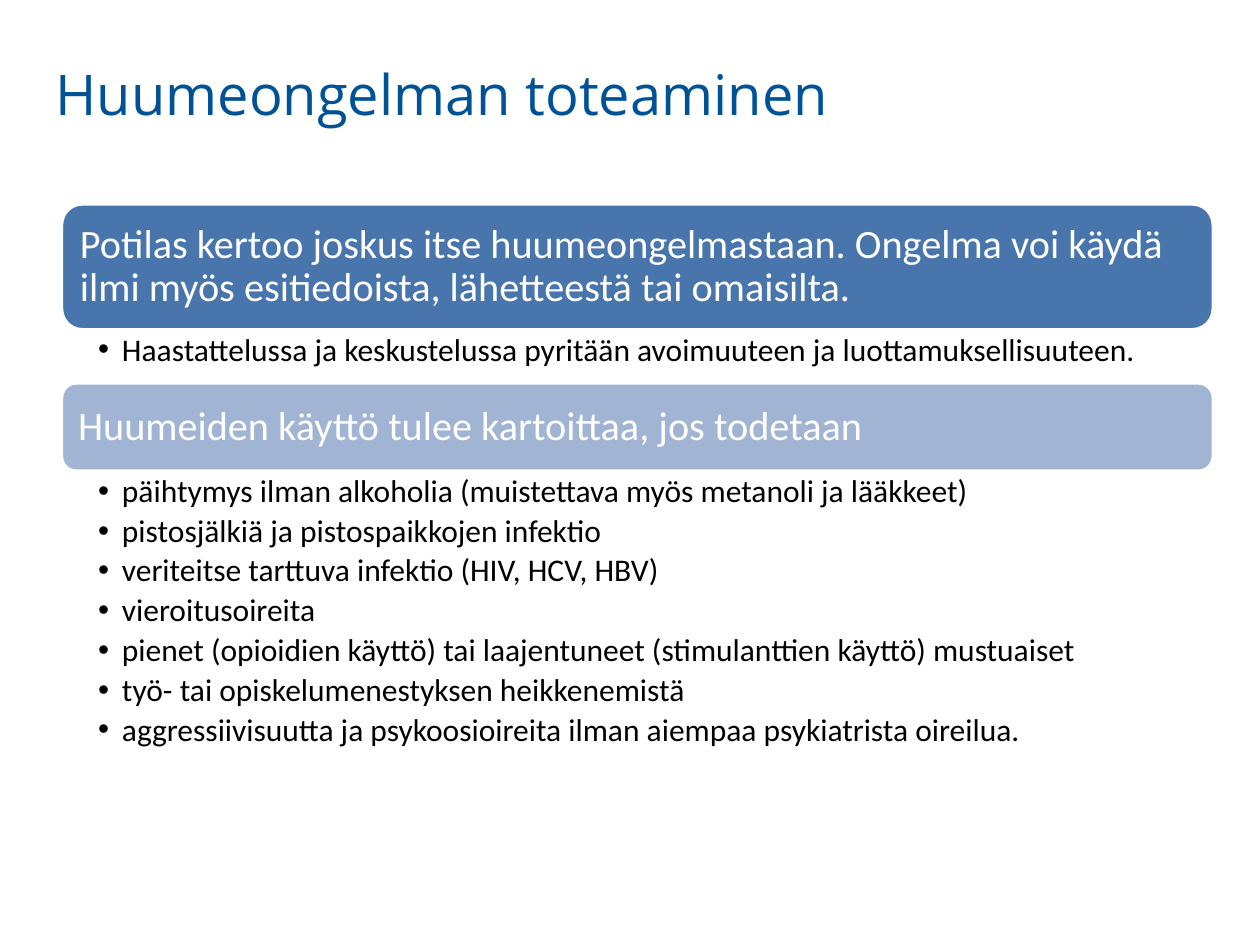
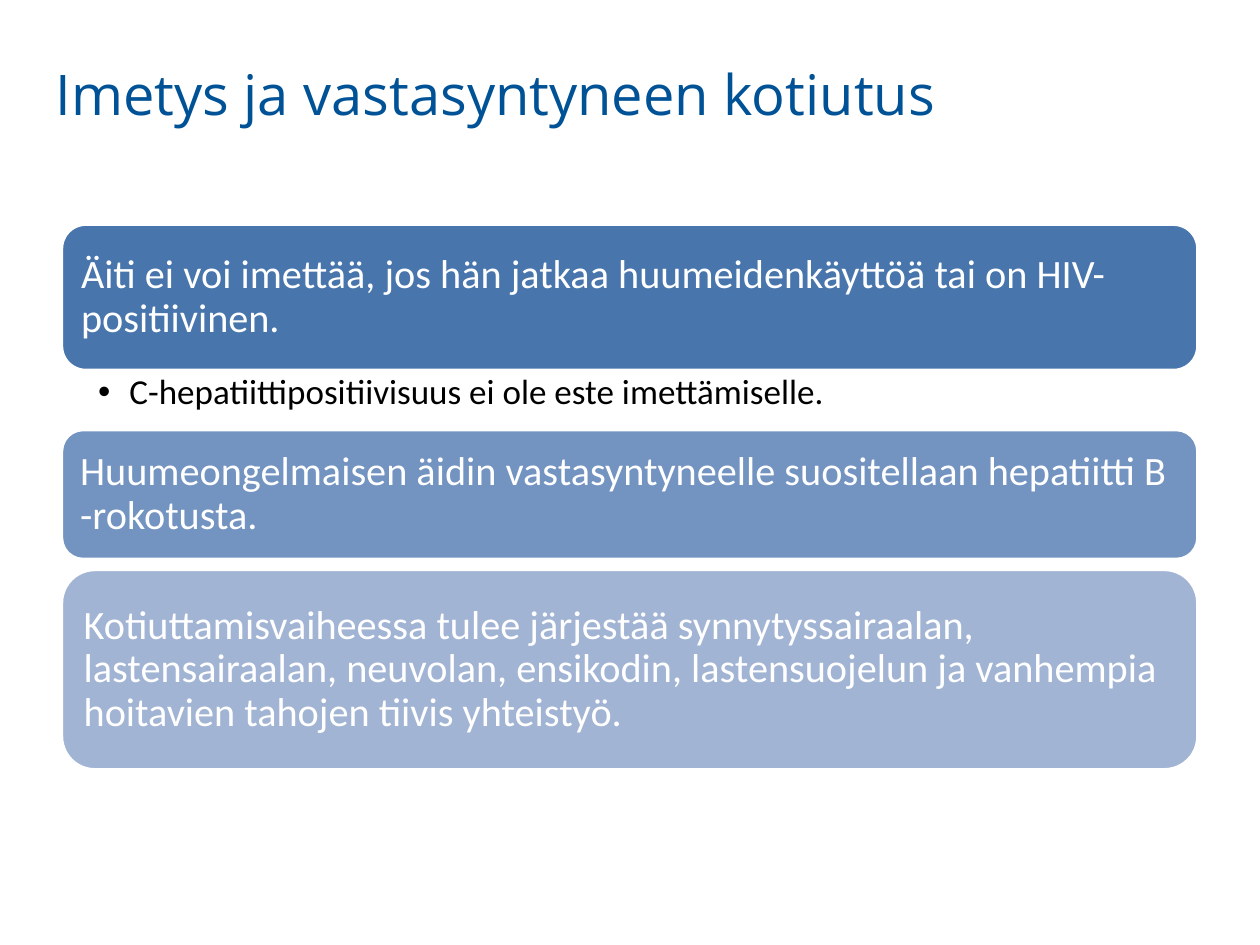
from lxml import etree
from pptx import Presentation
from pptx.dml.color import RGBColor
from pptx.enum import shapes, text
from pptx.oxml import ns
from pptx.util import Cm, Pt

TITLE_BLUE = RGBColor(0x00, 0x52, 0x96)
DEEP_BLUE = RGBColor(0x48, 0x75, 0xAC)
MID_BLUE = RGBColor(0x73, 0x93, 0xC1)
PALE_BLUE = RGBColor(0xA2, 0xB4, 0xD4)
WHITE = RGBColor(0xFF, 0xFF, 0xFF)
BLACK = RGBColor(0x00, 0x00, 0x00)


class Deck:
    """Shared style, the current slide and the next free height on it."""

    TITLE_FONT, BODY_FONT = "Open Sans", "Calibri"
    LEFT = Cm(1.24)

    def __init__(self):
        self.prs = Presentation()
        self.prs.slide_width, self.prs.slide_height = Cm(25.4), Cm(19.05)

    def start_slide(self, heading, top, width):
        self.slide = self.prs.slides.add_slide(self.prs.slide_layouts[6])
        self.top, self.width = top, width
        title = self.slide.shapes.add_textbox(Cm(0.94), Cm(1.12), Cm(22.91), Cm(3.2))
        frame = self.set_frame(title, Cm(0.18), Cm(0.18), Cm(0.08))
        frame.text = heading
        self.set_font(frame.paragraphs[0], self.TITLE_FONT, 32, TITLE_BLUE)

    def set_frame(self, shape, left, right, vertical):
        frame = shape.text_frame
        frame.word_wrap = True
        frame.margin_left, frame.margin_right = left, right
        frame.margin_top = frame.margin_bottom = vertical
        return frame

    def set_font(self, paragraph, name, size, colour):
        for run in paragraph.runs:
            run.font.name, run.font.size = name, Pt(size)
            run.font.color.rgb = colour

    def band(self, statement, height, fill, gap=0):
        """Rounded band with a statement, placed under what came before."""
        self.top += gap
        band = self.slide.shapes.add_shape(
            shapes.MSO_SHAPE.ROUNDED_RECTANGLE, self.LEFT, self.top, self.width, height)
        band.shadow.inherit = False
        band.fill.solid()
        band.fill.fore_color.rgb = fill
        band.line.color.rgb = WHITE
        band.line.width = Pt(2)
        frame = self.set_frame(band, Cm(0.25), Cm(0.25), Cm(0.25))
        frame.vertical_anchor = text.MSO_ANCHOR.MIDDLE
        frame.text = statement
        paragraph = frame.paragraphs[0]
        paragraph.alignment = text.PP_ALIGN.LEFT
        paragraph.line_spacing = 0.9
        self.set_font(paragraph, self.BODY_FONT, 23, WHITE)
        self.top += height

    def bullets(self, points, height, size=18, indent=Cm(0.48)):
        """Bulleted details directly under a band."""
        details = self.slide.shapes.add_textbox(self.LEFT, self.top, self.width, height)
        frame = self.set_frame(details, Cm(0.74), Cm(0.38), Cm(0.08))
        frame.text = "\n".join(points)
        for paragraph in frame.paragraphs:
            props = paragraph._p.get_or_add_pPr()
            props.set("marL", str(indent))
            props.set("indent", str(-indent))
            etree.SubElement(props, ns.qn("a:buFont")).set("typeface", "Arial")
            etree.SubElement(props, ns.qn("a:buChar")).set("char", "•")
            paragraph.line_spacing = 0.9
            paragraph.space_after = Pt(3.3)
            self.set_font(paragraph, self.BODY_FONT, size, BLACK)
        self.top += height


def main():
    deck = Deck()

    # Recognising a drug problem
    deck.start_slide("Huumeongelman toteaminen", Cm(4.11), Cm(23.22))
    deck.band("Potilas kertoo joskus itse huumeongelmastaan. Ongelma voi käydä ilmi "
              "myös esitiedoista, lähetteestä tai omaisilta.", Cm(2.54), DEEP_BLUE)
    deck.bullets(["Haastattelussa ja keskustelussa pyritään avoimuuteen ja "
                  "luottamuksellisuuteen."], Cm(1.07))
    deck.band("Huumeiden käyttö tulee kartoittaa, jos todetaan", Cm(1.78), PALE_BLUE)
    deck.bullets([
        "päihtymys ilman alkoholia (muistettava myös metanoli ja lääkkeet)",
        "pistosjälkiä ja pistospaikkojen infektio",
        "veriteitse tarttuva infektio (HIV, HCV, HBV)",
        "vieroitusoireita",
        "pienet (opioidien käyttö) tai laajentuneet (stimulanttien käyttö) mustuaiset",
        "työ- tai opiskelumenestyksen heikkenemistä",
        "aggressiivisuutta ja psykoosioireita ilman aiempaa psykiatrista oireilua.",
    ], Cm(5.94))

    # Breastfeeding and discharge of the newborn
    deck.start_slide("Imetys ja vastasyntyneen kotiutus", Cm(4.52), Cm(22.91))
    deck.band("Äiti ei voi imettää, jos hän jatkaa huumeidenkäyttöä tai on "
              "HIV-positiivinen.", Cm(2.95), DEEP_BLUE)
    deck.bullets(["C-hepatiittipositiivisuus ei ole este imettämiselle."],
                 Cm(1.19), size=20, indent=Cm(0.63))
    deck.band("Huumeongelmaisen äidin vastasyntyneelle suositellaan hepatiitti B "
              "-rokotusta.", Cm(2.62), MID_BLUE)
    deck.band("Kotiuttamisvaiheessa tulee järjestää synnytyssairaalan, lastensairaalan, "
              "neuvolan, ensikodin, lastensuojelun ja vanhempia hoitavien tahojen tiivis "
              "yhteistyö.", Cm(4.04), PALE_BLUE, gap=Cm(0.2))

    deck.prs.save("out.pptx")


if __name__ == "__main__":
    main()
